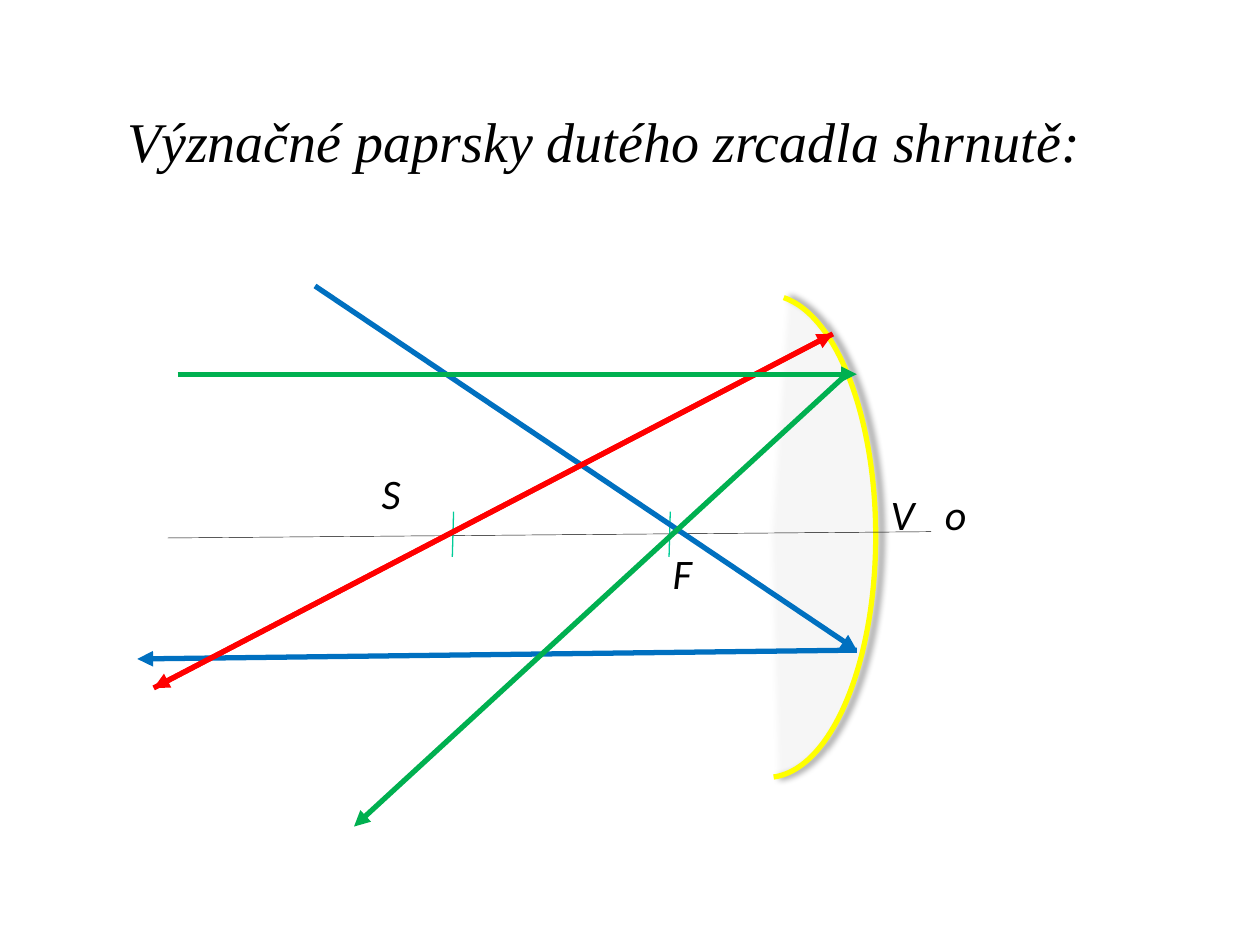
from math import atan2, degrees

from lxml import etree
from pptx import Presentation
from pptx.dml.color import RGBColor
from pptx.enum.shapes import MSO_CONNECTOR, MSO_SHAPE
from pptx.enum.text import MSO_ANCHOR, MSO_AUTO_SIZE, PP_ALIGN
from pptx.oxml.ns import qn
from pptx.util import Inches, Pt

STRAIGHT = MSO_CONNECTOR.STRAIGHT
ARC = MSO_SHAPE.ARC
MIDDLE = MSO_ANCHOR.MIDDLE
CENTER = PP_ALIGN.CENTER
NO_FIT = MSO_AUTO_SIZE.NONE

WIDTH, HEIGHT = 10, 7.5
COLUMNS, ROWS = 7, 5
BLACK, WHITE, YELLOW = "000000", "FFFFFF", "FFFF00"
BLUE, RED, GREEN, TEAL = "0070C0", "FF0000", "00B050", "00CC98"

RAYS = [
    (BLUE, (5.8, 3.16), (0.09, 3.23)),
    (BLUE, (1.5, 0.27), (5.8, 3.16)),
    (RED, (0.22, 3.46), (5.61, 0.65)),
    (RED, (5.61, 0.65), (0.22, 3.46)),
    (GREEN, (0.41, 0.97), (5.8, 0.97)),
    (GREEN, (5.72, 0.97), (1.81, 4.56)),
]
TICKS = [4.32, 2.6]
LABELS = [
    ("o", 6.4, 1.83),
    ("F", 4.24, 2.3),
    ("S", 1.93, 1.66),
    ("V", 5.97, 1.83),
]


def color(value):
    return RGBColor.from_string(value)


def assign(target, values):
    for name, value in values.items():
        setattr(target, name, value)


def write(frame, text, font, size, align=None):
    para = frame.paragraphs[0]
    para.alignment = align
    span = para.add_run()
    span.text = text
    assign(span.font, {"name": font, "size": Pt(size), "italic": True})
    span.font.color.rgb = color(BLACK)


def place(box, column, row):
    left, top, width, height = box
    return (Inches(left + column * width / COLUMNS),
            Inches(top + row * height / ROWS))


def add_line(page, box, start, end, shade, weight, arrow=False):
    line = page.shapes.add_connector(
        STRAIGHT, *place(box, *start), *place(box, *end))
    line.line.color.rgb = color(shade)
    line.line.width = Pt(weight)
    if arrow:
        etree.SubElement(line.line._get_or_add_ln(), qn("a:tailEnd"), type="triangle")
    etree.SubElement(line._element.spPr, qn("a:effectLst"))


def add_alpha(parent, percent):
    etree.SubElement(parent, qn("a:alpha"), val=str(percent * 1000))


def add_mirror(page, box):
    left, top = place(box, 4.23, 0.34)
    right, bottom = place(box, 5.95, 4.17)
    mirror = page.shapes.add_shape(ARC, left, top, right - left, bottom - top)
    for index, (across, down) in enumerate([(0.13, -1.89), (0.05, 1.91)]):
        mirror.adjustments[index] = degrees(atan2(down, across)) % 360 * 0.6
    mirror.fill.solid()
    mirror.fill.fore_color.rgb = color(WHITE)
    add_alpha(mirror._element.spPr.find(qn("a:solidFill"))[0], 10)
    mirror.line.color.rgb = color(YELLOW)
    mirror.line.width = Pt(3)
    mirror.shadow.inherit = False
    effects = mirror._element.spPr.find(qn("a:effectLst"))
    shadow = etree.SubElement(
        effects, qn("a:outerShdw"), blurRad=str(Pt(4)), dist=str(Pt(3)),
        dir="0", algn="l", rotWithShape="0")
    add_alpha(etree.SubElement(shadow, qn("a:srgbClr"), val=BLACK), 40)


def add_label(page, box, text, column, row):
    label = page.shapes.add_textbox(
        *place(box, column, row), Inches(0.39), Inches(0.5))
    label.text_frame.word_wrap = False
    write(label.text_frame, text, "Calibri", 24)


def add_title(page, box):
    title = page.shapes.title
    assign(title, dict(zip(("left", "top", "width", "height"), map(Inches, box))))
    assign(title.text_frame, {
        "vertical_anchor": MIDDLE, "auto_size": NO_FIT, "word_wrap": True,
    })
    write(title.text_frame, "Význačné paprsky dutého zrcadla shrnutě:",
          "Times New Roman", 32, CENTER)


def add_ray_diagram(page, box):
    add_mirror(page, box)
    add_line(page, box, (0.33, 2.27), (6.39, 2.22), BLACK, 0.25)
    for column in TICKS:
        add_line(page, box, (column, 2.06), (column - 0.01, 2.42), TEAL, 0.75)
    for shade, start, end in RAYS:
        add_line(page, box, start, end, shade, 3, arrow=True)
    for text, column, row in LABELS:
        add_label(page, box, text, column, row)


def main():
    deck = Presentation()
    assign(deck, {"slide_width": Inches(WIDTH), "slide_height": Inches(HEIGHT)})
    page = deck.slides.add_slide(deck.slide_layouts[5])
    add_title(page, (0.31, 0.31, 8.97, 1.61))
    add_ray_diagram(page, (1, 2, 7, 5))
    deck.save("out.pptx")


if __name__ == "__main__":
    main()
